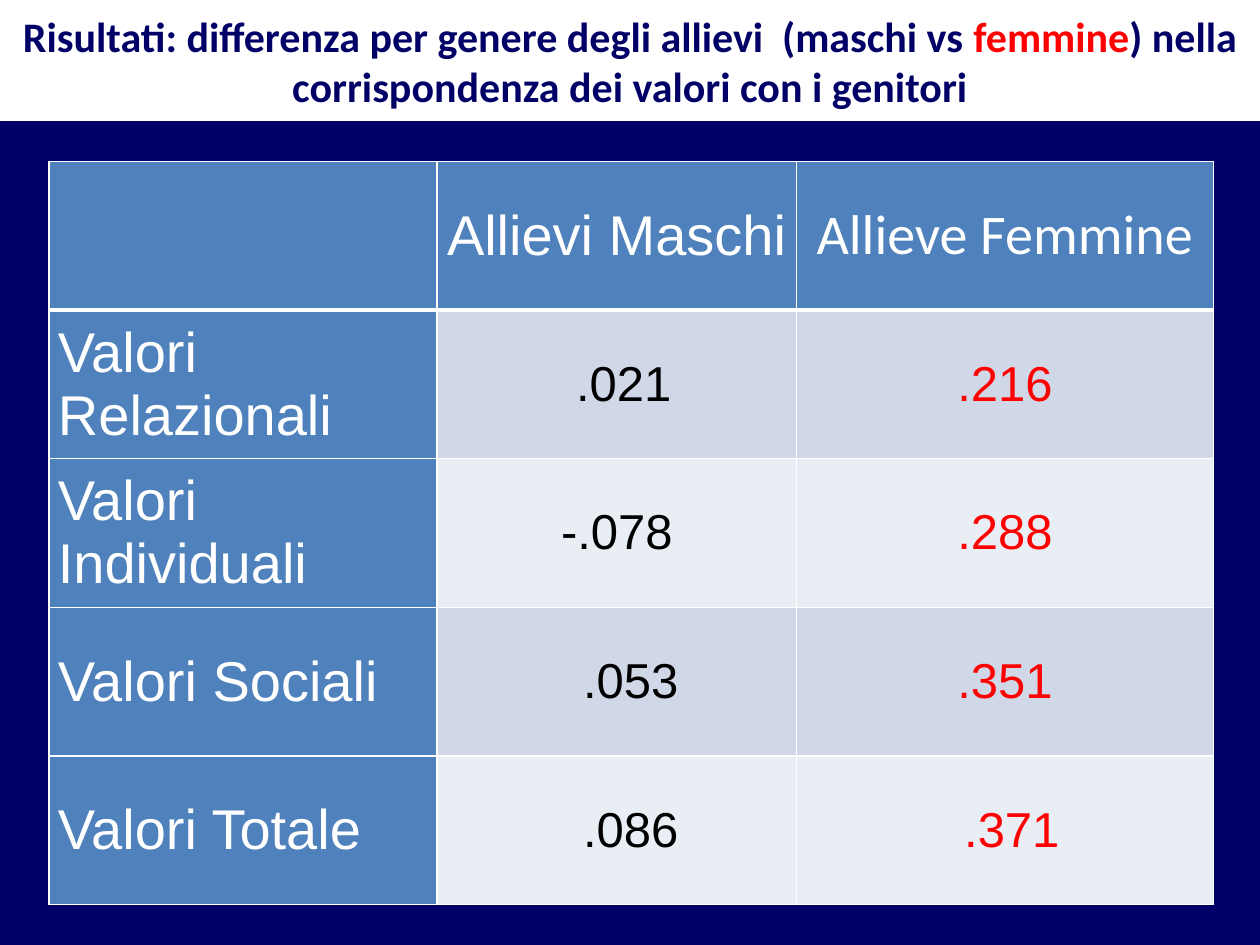
"""Build a slide with a table of value correspondence by student gender."""
from lxml import etree
from pptx import Presentation
from pptx.dml.color import RGBColor
from pptx.enum.shapes import MSO_SHAPE
from pptx.enum.text import MSO_ANCHOR, PP_ALIGN
from pptx.oxml.ns import qn
from pptx.util import Inches, Pt

RECTANGLE = MSO_SHAPE.RECTANGLE
MIDDLE = MSO_ANCHOR.MIDDLE
LEFT, CENTER = PP_ALIGN.LEFT, PP_ALIGN.CENTER
NAVY = RGBColor(0x00, 0x00, 0x66)
WHITE = RGBColor(0xFF, 0xFF, 0xFF)
BLACK = RGBColor(0x00, 0x00, 0x00)
RED = RGBColor(0xFF, 0x00, 0x00)
BLUE = RGBColor(0x4F, 0x81, 0xBD)
BAND_DARK = RGBColor(0xD0, 0xD8, 0xE8)
BAND_LIGHT = RGBColor(0xE9, 0xED, 0xF4)


def add_run(paragraph, text, color, **font_format):
    run = paragraph.add_run()
    run.text = text
    run.font.color.rgb = color
    for name, value in font_format.items():
        setattr(run.font, name, value)


def add_borders(cell, widths):
    properties = cell._tc.get_or_add_tcPr()
    for position, (side, width) in enumerate(widths.items()):
        line = etree.Element(qn(f"a:{side}"), w=str(Pt(width)))
        fill = etree.SubElement(line, qn("a:solidFill"))
        etree.SubElement(fill, qn("a:srgbClr"), val=str(WHITE))
        properties.insert(position, line)


presentation = Presentation()
presentation.slide_width = Inches(10)
presentation.slide_height = Inches(7.5)
slide = presentation.slides.add_slide(presentation.slide_layouts[6])
slide.background.fill.solid()
slide.background.fill.fore_color.rgb = NAVY

title = slide.shapes.add_shape(RECTANGLE, 0, 0, Inches(10), Inches(0.96))
title.shadow.inherit = False
title.fill.solid()
title.fill.fore_color.rgb = WHITE
title.line.fill.background()
title.text_frame.word_wrap = True
title.text_frame.vertical_anchor = MIDDLE
paragraph = title.text_frame.paragraphs[0]
paragraph.alignment = CENTER
title_format = {"name": "Calibri", "size": Pt(24), "bold": True}
for text, color in [
    ("Risultati: differenza per genere degli allievi  (maschi vs ", NAVY),
    ("femmine", RED),
    (") nella corrispondenza dei valori con i genitori", NAVY),
]:
    add_run(paragraph, text, color, **title_format)

rows = [
    ["", "Allievi Maschi", "Allieve Femmine"],
    ["Valori Relazionali", ".021", ".216"],
    ["Valori Individuali", "-.078", ".288"],
    ["Valori Sociali", ".053", ".351"],
    ["Valori Totale", ".086", ".371"],
]
column_widths = [3.08, 2.85, 3.31]
row_height = 1.18
value_colors = [WHITE, BLACK, RED]
extra_left_margins = {(1, 1): 0.11, (3, 1): 0.22, (4, 1): 0.22, (4, 2): 0.11}

table = slide.shapes.add_table(
    len(rows), len(column_widths), Inches(0.39), Inches(1.28),
    Inches(sum(column_widths)), Inches(row_height * len(rows)),
).table
for column, width in zip(table.columns, column_widths):
    column.width = Inches(width)

for row_index, texts in enumerate(rows):
    table.rows[row_index].height = Inches(row_height)
    band = BAND_DARK if row_index % 2 else BAND_LIGHT
    for column_index, text in enumerate(texts):
        cell = table.cell(row_index, column_index)
        is_heading = row_index == 0 or column_index == 0
        cell_format = {
            "vertical_anchor": MIDDLE,
            "margin_left": Inches(0.07 + extra_left_margins.get((row_index, column_index), 0)),
            "margin_right": Inches(0.07),
            "margin_top": 0,
            "margin_bottom": 0,
        }
        for name, value in cell_format.items():
            setattr(cell, name, value)
        cell.fill.solid()
        cell.fill.fore_color.rgb = BLUE if is_heading else band
        add_borders(cell, {
            "lnL": 1,
            "lnR": 1,
            "lnT": 3 if row_index == 1 else 1,
            "lnB": 3 if row_index == 0 else 1,
        })
        paragraph = cell.text_frame.paragraphs[0]
        paragraph.alignment = CENTER if column_index else LEFT
        if text:
            add_run(
                paragraph, text,
                WHITE if is_heading else value_colors[column_index],
                name="Calibri" if text == "Allieve Femmine" else "Arial",
                size=Pt(32 if is_heading else 28),
                bold=False,
            )

presentation.save("out.pptx")
